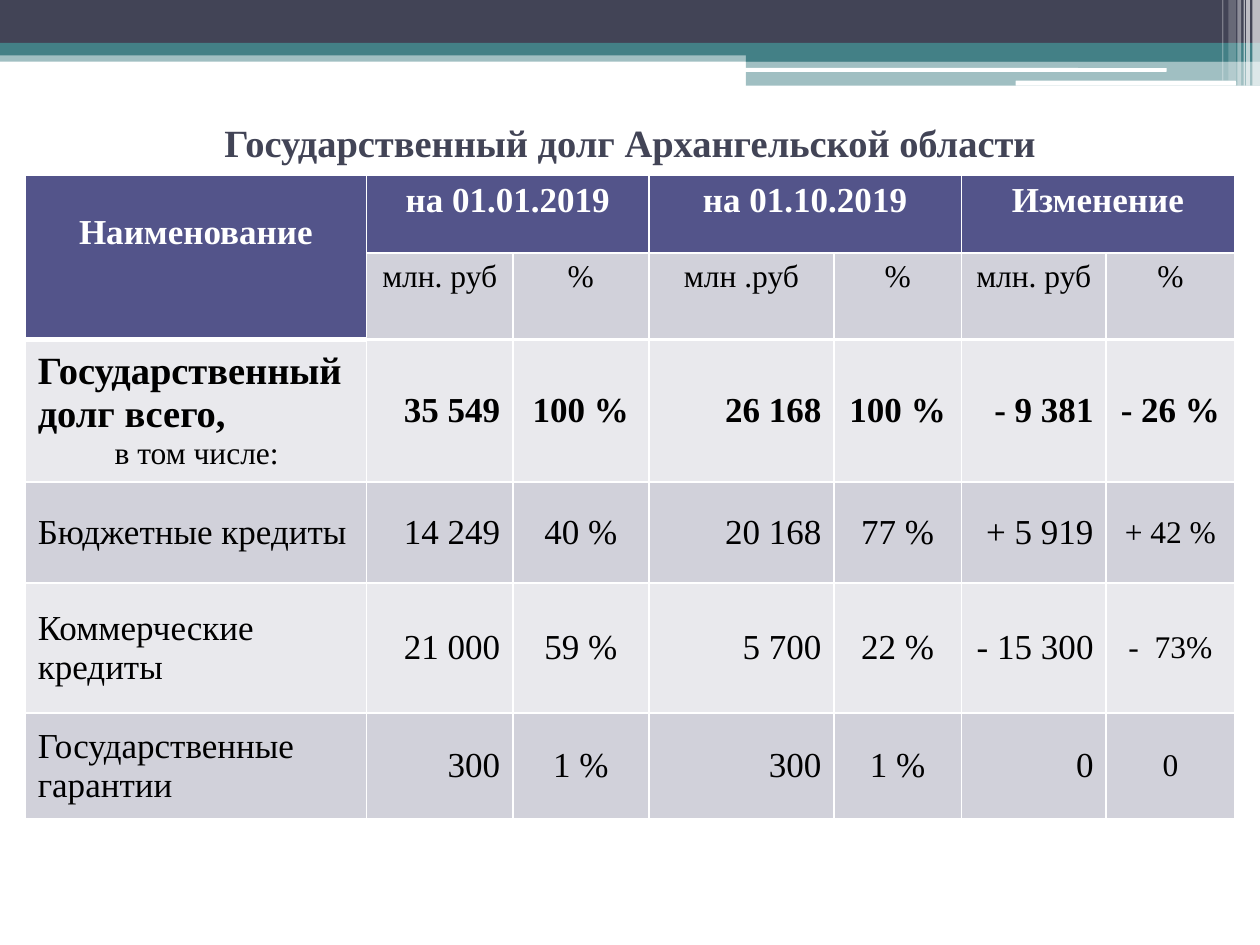
from pptx import Presentation
from pptx import util as u
from pptx.dml.color import RGBColor
from pptx.enum import shapes, text
from pptx.oxml import ns
from lxml import etree

WHITE = RGBColor(0xFF, 0xFF, 0xFF)
BLACK = RGBColor(0x00, 0x00, 0x00)
SLATE = RGBColor(0x42, 0x44, 0x56)
TEAL = RGBColor(0x43, 0x80, 0x86)
INDIGO = RGBColor(0x53, 0x54, 0x8A)
LIGHT = RGBColor(0xE9, 0xE9, 0xED)
DARKER = RGBColor(0xD1, 0xD1, 0xDA)

RECT = shapes.MSO_SHAPE.RECTANGLE
ROUND = shapes.MSO_SHAPE.ROUNDED_RECTANGLE
LEFT, CENTER, RIGHT = text.PP_ALIGN.LEFT, text.PP_ALIGN.CENTER, text.PP_ALIGN.RIGHT
TOP, MIDDLE = text.MSO_ANCHOR.TOP, text.MSO_ANCHOR.MIDDLE

BANDS = [
    (RECT, (0, 4, 100, 0.9), TEAL, 50),
    (RECT, (0, 0, 100, 3.4), SLATE, 100),
    (RECT, (0, 3.4, 100, 1), TEAL, 100),
    (RECT, (59.2, 3.9, 40.8, 1), TEAL, 100),
    (RECT, (59.2, 4.8, 40.8, 2), TEAL, 50),
    (ROUND, (59.1, 5.4, 33.5, 0.3), WHITE, 100),
    (ROUND, (80.6, 6.4, 17.5, 0.4), WHITE, 100),
]
STRIPES = [
    (99.4, 0.6, 6.8, 65),
    (98.9, 0.3, 6.8, 65),
    (98.7, 0.1, 6.8, 60),
    (98.2, 0.3, 6.8, 40),
    (97.5, 0.6, 6.4, 20),
    (97, 0.1, 6.4, 30),
]

COLUMNS = [27.1, 11.6, 10.8, 14.7, 10.1, 11.5, 10.2]
ROWS = [6.2, 6.5, 11.2, 8, 10.3, 8.4]
PERIODS = ["на 01.01.2019", "на 01.10.2019", "Изменение"]
UNITS = ["млн. руб", "%", "млн .руб", "%", "млн. руб", "%"]
DEBT = [
    ["Государственный долг всего,", "35 549", "100 %", "26 168", "100 %", "- 9 381", "- 26 %"],
    ["Бюджетные кредиты", "14 249", "40 %", "20 168", "77 %", "+ 5 919", "+ 42 %"],
    ["Коммерческие кредиты", "21 000", "59 %", "5 700", "22 %", "- 15 300", "-  73%"],
    ["Государственные гарантии", "300", "1 %", "300", "1 %", "0", "0"],
]


class Deck:
    """Holds the style and the current slide, measured on a grid of 100 columns by 75 rows."""

    font = "Times New Roman"

    def __init__(self, presentation):
        self.width, self.height = presentation.slide_width, presentation.slide_height
        self.slide = presentation.slides.add_slide(presentation.slide_layouts[6])

    def columns(self, count):
        return round(self.width * count / 100)

    def rows(self, count):
        return round(self.height * count / 75)

    def box(self, left, top, width, height):
        return self.columns(left), self.rows(top), self.columns(width), self.rows(height)

    def band(self, kind, place, color, opacity):
        shape = self.slide.shapes.add_shape(kind, *self.box(*place))
        shape.shadow.inherit = False
        shape.fill.solid()
        shape.fill.fore_color.rgb = color
        shape.line.fill.background()
        if opacity < 100:
            fill = shape.element.spPr.find(ns.qn("a:solidFill"))
            etree.SubElement(fill[0], ns.qn("a:alpha"), val=str(opacity * 1000))

    def words(self, paragraph, words, align=CENTER, color=BLACK, **style):
        paragraph.alignment = align
        run = paragraph.add_run()
        run.text = words
        run.font.color.rgb = color
        for name, value in {"name": self.font, "size": u.Pt(20), "bold": False, **style}.items():
            setattr(run.font, name, value)

    def title(self, place, words):
        frame = self.slide.shapes.add_textbox(*self.box(*place)).text_frame
        frame.word_wrap = True
        frame.vertical_anchor = MIDDLE
        self.words(frame.paragraphs[0], words, color=SLATE, size=u.Pt(22), bold=True)

    def table(self, left, top, columns, rows):
        place = self.box(left, top, sum(columns), sum(rows))
        table = self.slide.shapes.add_table(len(rows), len(columns), *place).table
        for column, width in zip(table.columns, columns):
            column.width = self.columns(width)
        for row, height in zip(table.rows, rows):
            row.height = self.rows(height)
        return table

    def cell(self, cell, words, fill, anchor=MIDDLE, **style):
        cell.fill.solid()
        cell.fill.fore_color.rgb = fill
        cell.vertical_anchor = anchor
        self.words(cell.text_frame.paragraphs[0], words, **style)

    def borders(self, cell, **widths):
        properties = cell._tc.get_or_add_tcPr()
        for index, side in enumerate("LRTB"):
            width = u.Pt(widths.get(side, 1))
            line = etree.Element(ns.qn(f"a:ln{side}"), w=str(width))
            fill = etree.SubElement(line, ns.qn("a:solidFill"))
            etree.SubElement(fill, ns.qn("a:srgbClr"), val=str(WHITE))
            properties.insert(index, line)


def fill_header(deck, table):
    style = {"fill": INDIGO, "anchor": TOP, "color": WHITE, "bold": True}
    name = table.cell(0, 0)
    name.merge(table.cell(1, 0))
    deck.cell(name, "Наименование", **style)
    name.margin_top = deck.rows(3)
    for index, period in enumerate(PERIODS):
        first = 1 + 2 * index
        table.cell(0, first).merge(table.cell(0, first + 1))
        deck.cell(table.cell(0, first), period, **style)
    for column, unit in enumerate(UNITS, 1):
        deck.cell(table.cell(1, column), unit, DARKER, TOP, size=u.Pt(18))


def fill_debt(deck, table):
    for row, values in enumerate(DEBT, 2):
        total = row == 2
        for column, value in enumerate(values):
            align = LEFT if column == 0 else RIGHT if column % 2 else CENTER
            size = 22 if total and column == 0 else 18 if column == 6 and not total else 20
            deck.cell(table.cell(row, column), value, DARKER if row % 2 else LIGHT,
                      align=align, size=u.Pt(size), bold=total)
    note = table.cell(2, 0).text_frame.add_paragraph()
    deck.words(note, "в том числе:", align=LEFT, size=u.Pt(18))
    note._p.get_or_add_pPr().set("marL", str(deck.columns(6.1)))


def main():
    presentation = Presentation()
    presentation.slide_width, presentation.slide_height = u.Inches(10), u.Inches(7.5)
    deck = Deck(presentation)
    for band in BANDS:
        deck.band(*band)
    for left, width, height, opacity in STRIPES:
        deck.band(RECT, (left, 0, width, height), WHITE, opacity)
    deck.title((0, 7.8, 100, 7), "Государственный долг Архангельской области")
    table = deck.table(2, 13.9, COLUMNS, ROWS)
    fill_header(deck, table)
    fill_debt(deck, table)
    for row in range(len(ROWS)):
        for column in range(len(COLUMNS)):
            divider = 2.25 if column else 3
            widths = {1: {"B": divider}, 2: {"T": divider}}.get(row, {})
            if (row, column) == (0, 0):
                widths = {"B": divider}
            deck.borders(table.cell(row, column), **widths)
    presentation.save("out.pptx")


if __name__ == "__main__":
    main()
